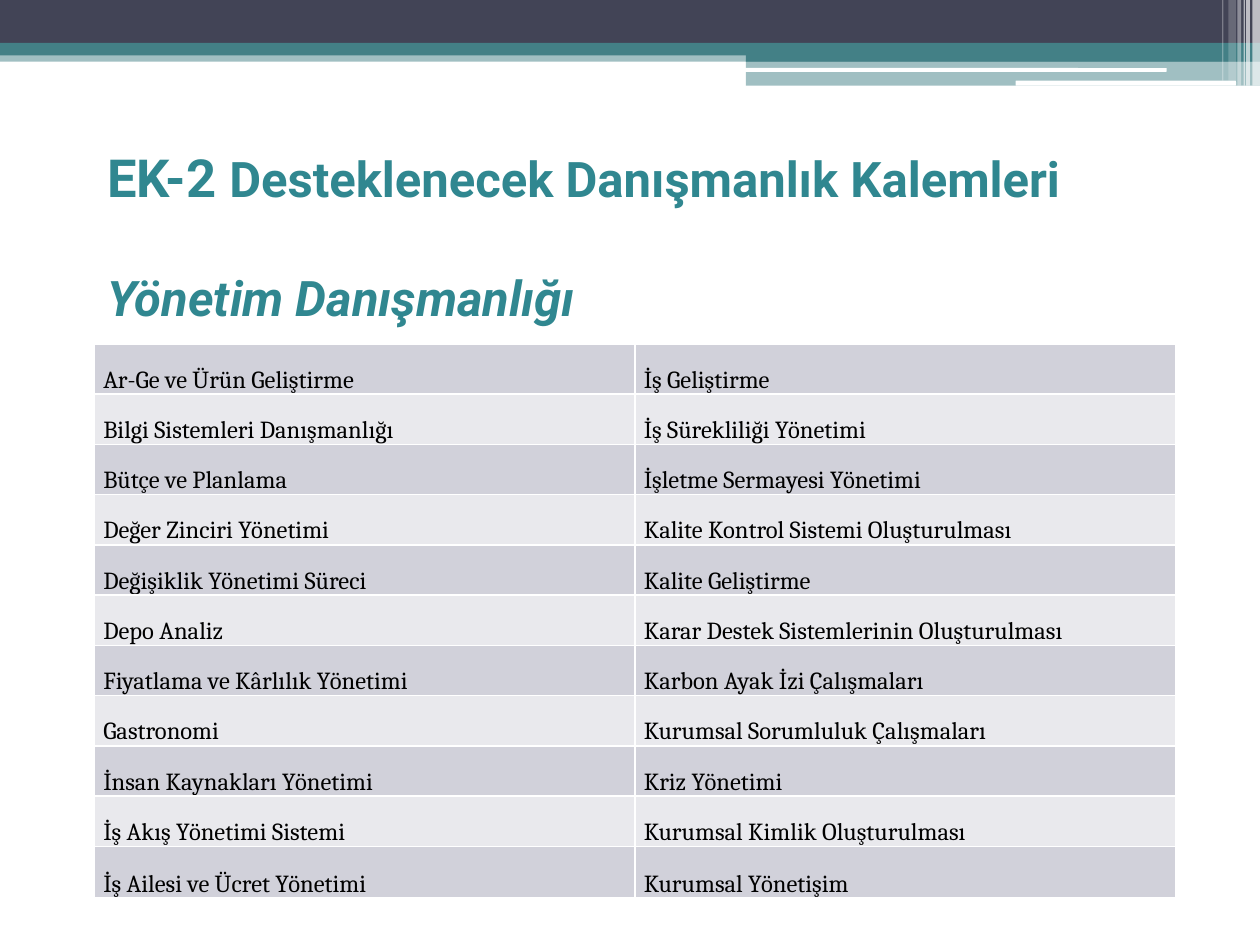
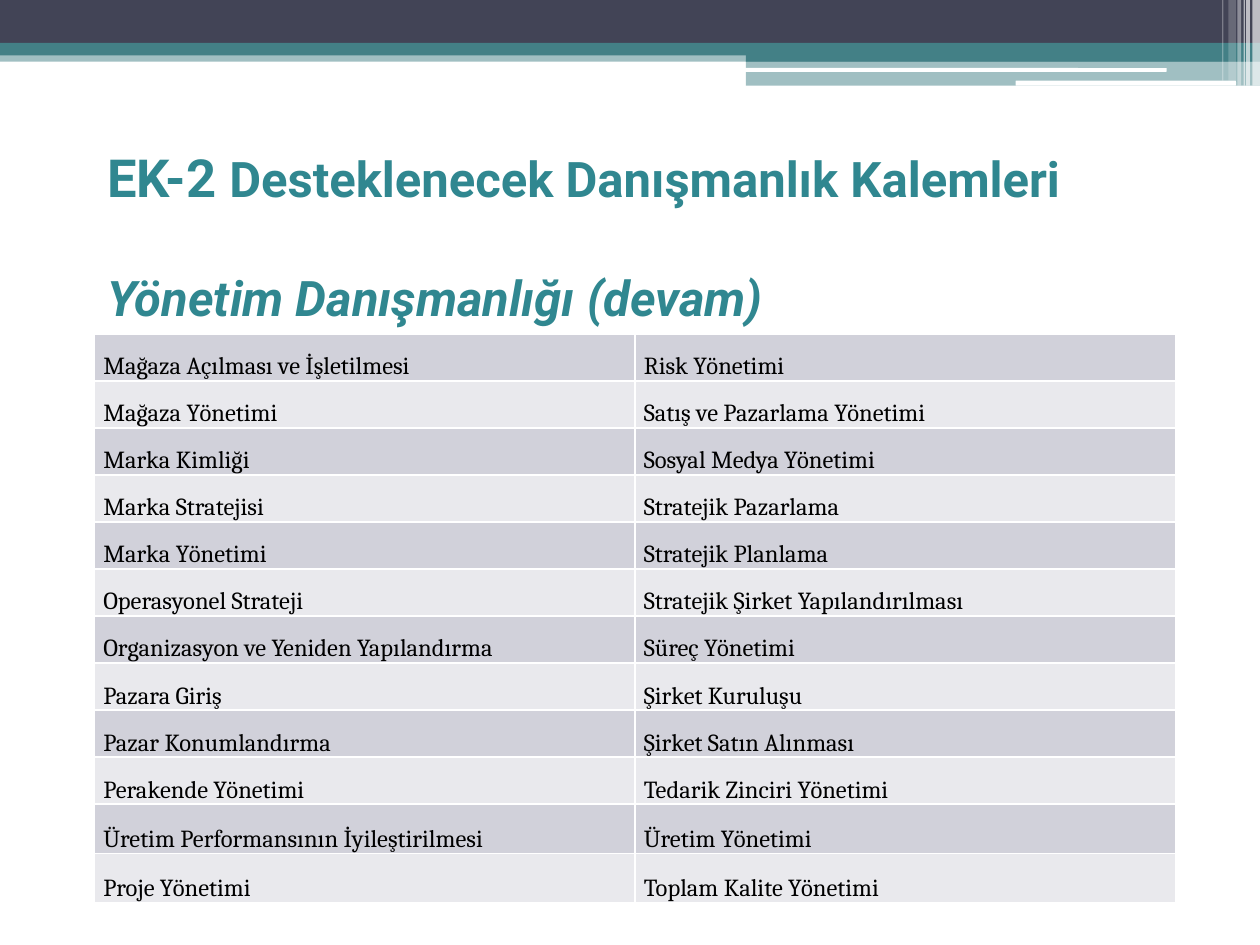
from lxml.etree import SubElement
from pptx import Presentation
from pptx.dml.color import RGBColor
from pptx.enum.shapes import MSO_SHAPE as Preset
from pptx.enum.text import MSO_ANCHOR as Anchor, MSO_AUTO_SIZE as AutoSize, PP_ALIGN as Align
from pptx.oxml.ns import qn
from pptx.util import Inches, Pt

NAVY, TEAL, TITLE_TEAL = "424456", "438086", "308790"
WHITE, BLACK = "FFFFFF", "000000"
ROW_FILLS = ["D1D1DA", "E9E9ED"]
TITLE_FONT, TABLE_FONT = "Roboto", "Cambria"


def color(hex_code):
    return RGBColor.from_string(hex_code)


presentation = Presentation()
presentation.slide_width, presentation.slide_height = Inches(10), Inches(7.5)
COLUMN = presentation.slide_width / 1000
ROW = presentation.slide_height / 750


def grid_box(left, top, width, height):
    """Turn a box in grid columns and rows into slide lengths."""
    return [round(n * unit) for n, unit in zip((left, top, width, height), (COLUMN, ROW) * 2)]


# Header bands: preset, box, colour, opacity in percent
header_bands = [
    (Preset.RECTANGLE, (0, 40, 1000, 9), TEAL, 50),
    (Preset.RECTANGLE, (0, 0, 1000, 34), NAVY, 100),
    (Preset.RECTANGLE, (0, 34, 1000, 10), TEAL, 100),
    (Preset.RECTANGLE, (592, 39, 408, 10), TEAL, 100),
    (Preset.RECTANGLE, (592, 48, 408, 20), TEAL, 50),
    (Preset.ROUNDED_RECTANGLE, (591, 54, 335, 3), WHITE, 100),
    (Preset.ROUNDED_RECTANGLE, (806, 64, 175, 4), WHITE, 100),
]
# Vertical stripes at the right end: left, width, height, opacity
for left, width, height, opacity in [(994, 6, 68, 65), (989, 3, 68, 65), (987, 1, 68, 60),
                                     (982, 3, 68, 40), (975, 6, 64, 20), (970, 1, 64, 30)]:
    header_bands.append((Preset.RECTANGLE, (left, 0, width, height), WHITE, opacity))

# Subtitle, table top, row height, last rows and their height, table text
pages = [
    ("Yönetim Danışmanlığı", 273, 39.9, 1, 41, [
        ("Ar-Ge ve Ürün Geliştirme", "İş Geliştirme"),
        ("Bilgi Sistemleri Danışmanlığı", "İş Sürekliliği Yönetimi"),
        ("Bütçe ve Planlama", "İşletme Sermayesi Yönetimi"),
        ("Değer Zinciri Yönetimi", "Kalite Kontrol Sistemi Oluşturulması"),
        ("Değişiklik Yönetimi Süreci", "Kalite Geliştirme"),
        ("Depo Analiz", "Karar Destek Sistemlerinin Oluşturulması"),
        ("Fiyatlama ve Kârlılık Yönetimi", "Karbon Ayak İzi Çalışmaları"),
        ("Gastronomi", "Kurumsal Sorumluluk Çalışmaları"),
        ("İnsan Kaynakları Yönetimi", "Kriz Yönetimi"),
        ("İş Akış Yönetimi Sistemi", "Kurumsal Kimlik Oluşturulması"),
        ("İş Ailesi ve Ücret Yönetimi", "Kurumsal Yönetişim"),
    ]),
    ("Yönetim Danışmanlığı (devam)", 265, 37.35, 2, 39, [
        ("Mağaza Açılması ve İşletilmesi", "Risk Yönetimi"),
        ("Mağaza Yönetimi", "Satış ve Pazarlama Yönetimi"),
        ("Marka Kimliği", "Sosyal Medya Yönetimi"),
        ("Marka Stratejisi", "Stratejik Pazarlama"),
        ("Marka Yönetimi", "Stratejik Planlama"),
        ("Operasyonel Strateji", "Stratejik Şirket Yapılandırılması"),
        ("Organizasyon ve Yeniden Yapılandırma", "Süreç Yönetimi"),
        ("Pazara Giriş", "Şirket Kuruluşu"),
        ("Pazar Konumlandırma", "Şirket Satın Alınması"),
        ("Perakende Yönetimi", "Tedarik Zinciri Yönetimi"),
        ("Üretim Performansının İyileştirilmesi", "Üretim Yönetimi"),
        ("Proje Yönetimi", "Toplam Kalite Yönetimi"),
    ]),
]

title_only = presentation.slide_layouts[5]
master_tree = presentation.slide_master.shapes.element

for page_number, (subtitle, table_top, row_height, last_rows, last_height, items) in enumerate(pages):
    slide = presentation.slides.add_slide(title_only)

    # The bands are drawn once and moved to the master, which both slides share
    if page_number == 0:
        for preset, box, fill, opacity in header_bands:
            band = slide.shapes.add_shape(preset, *grid_box(*box))
            band.shadow.inherit = False
            band.fill.solid()
            band.fill.fore_color.rgb = color(fill)
            band.line.fill.background()
            if opacity < 100:
                fill_color = band.element.spPr.find(".//" + qn("a:srgbClr"))
                SubElement(fill_color, qn("a:alpha"), val=str(opacity * 1000))
            master_tree.append(band.element)

    title = slide.shapes.title
    title.left, title.top, title.width, title.height = grid_box(75, 115, 850, 149)
    title.fill.solid()
    title.fill.fore_color.rgb = color(WHITE)
    title.line.color.rgb = color(WHITE)
    title.line.width = Pt(0.75)
    title_frame = title.text_frame
    title_frame.auto_size = AutoSize.NONE
    title_frame.word_wrap = True
    title_frame.vertical_anchor = Anchor.BOTTOM
    heading = title_frame.paragraphs[0]
    subheading = title_frame.add_paragraph()
    subheading.space_before = Pt(34)
    for paragraph, text, size, italic in [
        (heading, "EK-2 ", 30, False),
        (heading, "Desteklenecek Danışmanlık Kalemleri", 28, False),
        (subheading, subtitle, 28, True),
    ]:
        paragraph.alignment = Align.LEFT
        run = paragraph.add_run()
        run.text = text
        run.font.name = TITLE_FONT
        run.font.size = Pt(size)
        run.font.bold = True
        run.font.italic = italic
        run.font.color.rgb = color(TITLE_TEAL)

    row_heights = [row_height] * (len(items) - last_rows) + [last_height] * last_rows
    table_box = grid_box(75, table_top, 858, sum(row_heights))
    table = slide.shapes.add_table(len(items), 2, *table_box).table
    table.first_row = False
    for row_index, (height, texts) in enumerate(zip(row_heights, items)):
        table.rows[row_index].height = round(height * ROW)
        for column_index, text in enumerate(texts):
            cell = table.cell(row_index, column_index)
            cell.vertical_anchor = Anchor.BOTTOM
            cell.margin_left = cell.margin_right = Inches(0.07)
            cell.margin_top = cell.margin_bottom = 0
            cell_properties = cell._tc.get_or_add_tcPr()
            for edge in ("a:lnL", "a:lnR", "a:lnT", "a:lnB"):
                border = SubElement(cell_properties, qn(edge), w=str(Pt(1)))
                border_fill = SubElement(border, qn("a:solidFill"))
                SubElement(border_fill, qn("a:srgbClr"), val=WHITE)
            cell.fill.solid()
            cell.fill.fore_color.rgb = color(ROW_FILLS[row_index % 2])
            paragraph = cell.text_frame.paragraphs[0]
            paragraph.line_spacing = 1.07
            paragraph.space_after = Pt(8)
            run = paragraph.add_run()
            run.text = text
            run.font.name = TABLE_FONT
            run.font.size = Pt(14)
            run.font.color.rgb = color(BLACK)

presentation.save("out.pptx")
